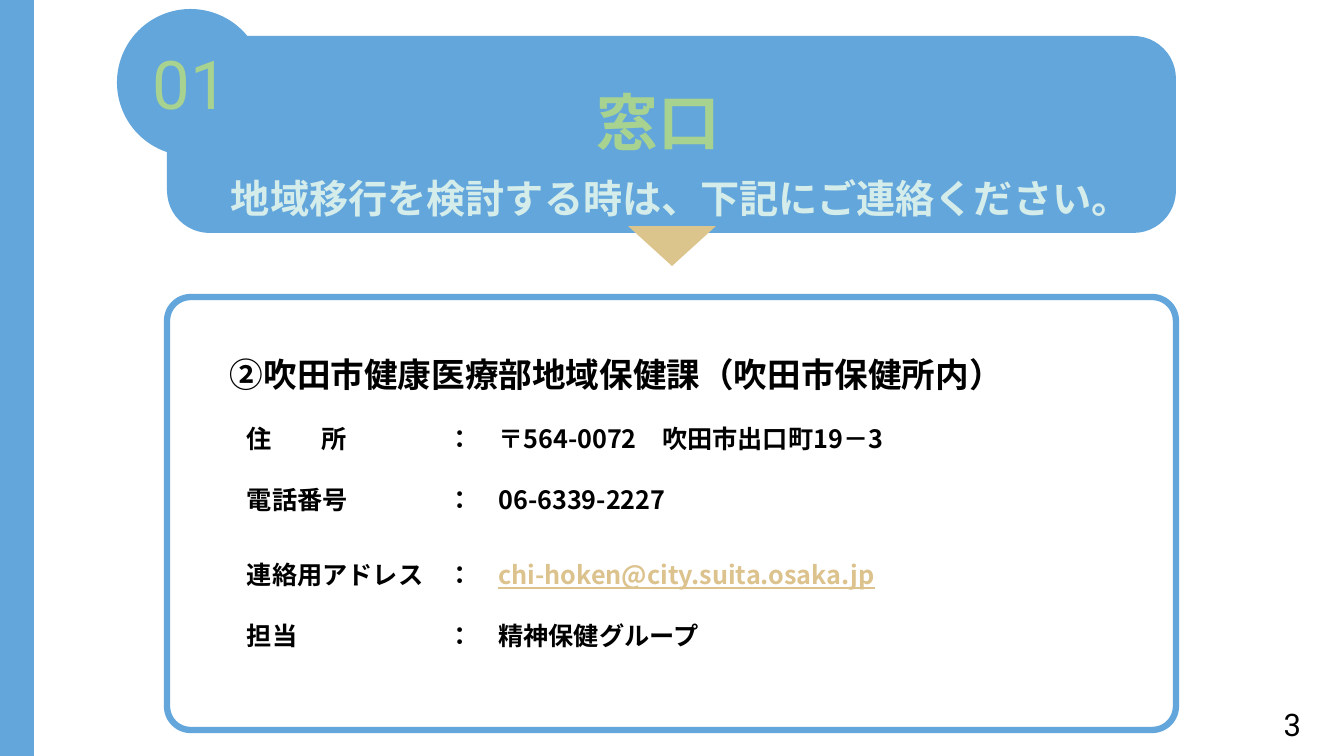
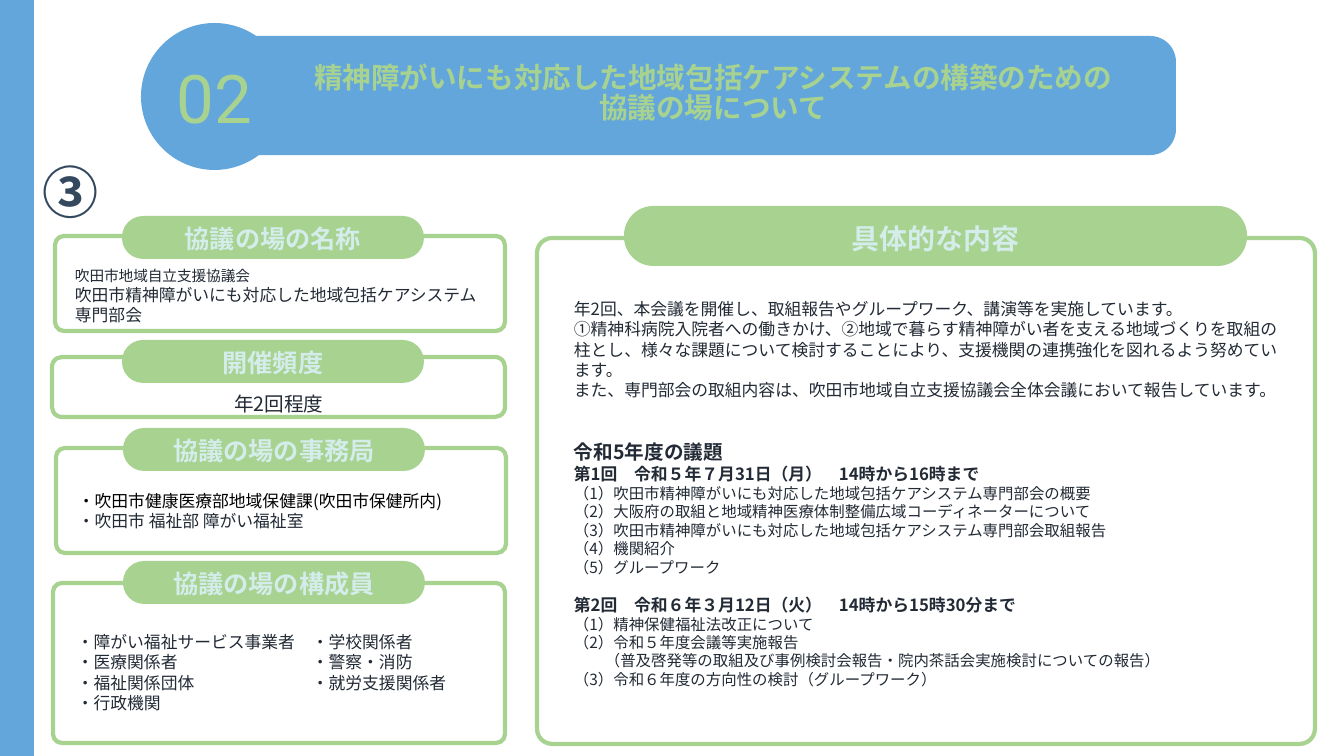
from lxml.etree import SubElement
from pptx import Presentation
from pptx.dml.color import RGBColor
from pptx.enum.lang import MSO_LANGUAGE_ID as Language
from pptx.enum.shapes import MSO_SHAPE as Shape
from pptx.enum.text import MSO_ANCHOR as Anchor, PP_ALIGN as Align
from pptx.oxml.ns import qn
from pptx.util import Pt

SLIDE_WIDTH, SLIDE_HEIGHT = 1344, 756
EMU_PER_PX = 914400 / 100.8
JAPANESE, LATIN = "Noto Sans CJK JP", "Roboto"
LINE_RATIO = 1.2
COLORS = {
    "blue": "63A6DB", "green": "A7D28F", "pale": "D4ECEA", "sand": "DCC58C",
    "link": "DCC28C", "ink": "222A35", "navy": "34485E",
    "black": "000000", "white": "FFFFFF",
}

# Contact slide: label, value, value format, points of space before
CONTACT_HEADING = "②吹田市健康医療部地域保健課（吹田市保健所内）"
CONTACT_ROWS = [
    ("住\t所", "〒564-0072　吹田市出口町19－3", {}, 0),
    ("電話番号", "06-6339-2227", {}, 22),
    ("連絡用アドレス", "chi-hoken@city.suita.osaka.jp",
     {"color": "link", "underline": True}, 32),
    ("担当", "精神保健グループ", {}, 22),
]
LABEL_TAB, COLON_TAB = 75, 201

# Council slide: pill title, pill box, frame box, corner radius, pill format
SMALL_PILL = {"size": 18, "top": 6}
PANELS = [
    ("協議の場の名称", (122, 216, 302, 43), (55, 236, 450, 95), 9, SMALL_PILL),
    ("開催頻度", (122, 340, 302, 43), (52, 357, 453, 60), 10, SMALL_PILL),
    ("協議の場の事務局", (123, 428, 302, 43), (56, 448, 450, 105), 9, SMALL_PILL),
    ("協議の場の構成員", (123, 561, 302, 43), (53, 583, 452, 160), 9, SMALL_PILL),
    ("具体的な内容", (624, 206, 623, 60), (537, 238, 778, 506), 15,
     {"size": 20, "top": 10}),
]
COUNCIL_TITLE = ["精神障がいにも対応した地域包括ケアシステムの構築のための", "協議の場について"]
COUNCIL_NAMES = [
    ("吹田市地域自立支援協議会", {"size": 10.5}),
    "吹田市精神障がいにも対応した地域包括ケアシステム専門部会",
]
OFFICES = [
    ("・吹田市健康医療部地域保健課(吹田市保健所内)", {"color": "black"}),
    "・吹田市 福祉部 障がい福祉室",
]
MEMBERS = [
    "・障がい福祉サービス事業者\t・学校関係者",
    "・医療関係者\t・警察・消防",
    "・福祉関係団体\t・就労支援関係者",
    "・行政機関",
]
MEMBER_TAB = 235
ACTIVITIES = [
    "年2回、本会議を開催し、取組報告やグループワーク、講演等を実施しています。",
    "①精神科病院入院者への働きかけ、②地域で暮らす精神障がい者を支える地域づくりを取組の"
    "柱とし、様々な課題について検討することにより、支援機関の連携強化を図れるよう努めています。",
    "また、専門部会の取組内容は、吹田市地域自立支援協議会全体会議において報告しています。",
]
AGENDA_HEADING = "令和5年度の議題"
# Meeting, points of space before, (agenda item, indent in px)
MEETINGS = [
    ("第1回　令和５年７月31日（月）　14時から16時まで", 0, [
        ("（1）吹田市精神障がいにも対応した地域包括ケアシステム専門部会の概要", 0),
        ("（2）大阪府の取組と地域精神医療体制整備広域コーディネーターについて", 0),
        ("（3）吹田市精神障がいにも対応した地域包括ケアシステム専門部会取組報告", 0),
        ("（4）機関紹介", 0),
        ("（5）グループワーク", 0),
    ]),
    ("第2回　令和６年３月12日（火）　14時から15時30分まで", 13, [
        ("（1）精神保健福祉法改正について", 0),
        ("（2）令和５年度会議等実施報告", 0),
        ("（普及啓発等の取組及び事例検討会報告・院内茶話会実施検討についての報告）", 31),
        ("（3）令和６年度の方向性の検討（グループワーク）", 0),
    ]),
]


def px(length):
    return round(length * EMU_PER_PX)


def rgb(name):
    return RGBColor.from_string(COLORS[name])


def add_span(para, text, size=12, color="ink", bold=False, underline=False,
             font=JAPANESE, **_):
    span = para.add_run()
    span.text = text
    style = span.font
    style.size, style.bold, style.underline = Pt(size), bold, underline
    style.color.rgb = rgb(color)
    style.name = font
    style.language_id = Language.JAPANESE
    SubElement(span._r.rPr, qn("a:ea")).set("typeface", JAPANESE)


def write(frame, paras, **defaults):
    """Fill a text frame; a paragraph is text, or (text or spans, format)."""
    for index, item in enumerate(paras):
        content, changes = (item, {}) if isinstance(item, str) else item
        look = {**defaults, **changes}
        para = frame.paragraphs[0] if index == 0 else frame.add_paragraph()
        properties = para._p.get_or_add_pPr()
        if look.get("indent"):
            properties.set("marL", str(px(look["indent"])))
        if look.get("tabs"):
            stops = SubElement(properties, qn("a:tabLst"))
            for stop in look["tabs"]:
                SubElement(stops, qn("a:tab"), pos=str(px(stop)), algn="l")
        para.alignment = look.get("align", Align.LEFT)
        if not look.get("natural"):
            para.line_spacing = Pt(
                look.get("line") or round(look.get("size", 12) * LINE_RATIO, 1))
        if index and look.get("before"):
            para.space_before = Pt(look["before"])
        spans = [(content, {})] if isinstance(content, str) else content
        for text, span_look in spans:
            add_span(para, text, **{**look, **span_look})


def add_text(page, box, paras, **look):
    frame = page.shapes.add_textbox(*map(px, box)).text_frame
    frame.word_wrap = True
    write(frame, paras, **look)


def add_box(page, kind, box, fill, line=None, width=3, radius=None):
    shape = page.shapes.add_shape(kind, *map(px, box))
    shape.shadow.inherit = False
    shape.fill.solid()
    shape.fill.fore_color.rgb = rgb(fill)
    if line:
        shape.line.color.rgb = rgb(line)
        shape.line.width = Pt(width)
    else:
        shape.line.fill.background()
    if radius:
        shape.adjustments[0] = round(radius / min(box[2:]), 3)
    return shape


def add_section(deck, number, banner_height, circle_at):
    """Start a slide with its side band, banner and numbered circle."""
    page = deck.slides.add_slide(deck.slide_layouts[6])
    add_box(page, Shape.RECTANGLE, (0, 0, 34, SLIDE_HEIGHT), "blue")
    add_box(page, Shape.ROUNDED_RECTANGLE, (167, 36, 1009, banner_height),
            "blue", radius=banner_height * 0.216)
    circle = add_box(page, Shape.OVAL, (*circle_at, 147, 147), "blue")
    circle.text_frame.vertical_anchor = Anchor.MIDDLE
    write(circle.text_frame, [number], size=48, color="green", font=LATIN,
          align=Align.CENTER, natural=True)
    return page


def add_panel(page, title, pill_box, frame_box, radius, look):
    add_box(page, Shape.ROUNDED_RECTANGLE, frame_box, "white",
            line="green", radius=radius)
    pill = add_box(page, Shape.ROUNDED_RECTANGLE, pill_box, "green",
                   radius=pill_box[3] * 0.49)
    pill.text_frame.margin_top = px(look["top"])
    write(pill.text_frame, [title], size=look["size"], color="pale",
          bold=True, align=Align.CENTER)


def build_contact(deck):
    page = add_section(deck, "01", 197, (117, 9))
    add_text(page, (331, 79, 655, 99), ["窓口"], size=44, color="green",
             bold=True, align=Align.CENTER)
    add_text(page, (221, 169, 930, 57),
             ["地域移行を検討する時は、下記にご連絡ください。"],
             size=28, color="pale", bold=True, font=LATIN)
    add_box(page, Shape.ROUNDED_RECTANGLE, (167, 297, 1009, 433), "white",
            line="blue", width=4.5, radius=24)
    arrow = add_box(page, Shape.ISOSCELES_TRIANGLE, (628, 226, 88, 40), "sand")
    arrow.rotation = 180
    add_text(page, (220, 349, 930, 50), [CONTACT_HEADING], size=24,
             color="black", bold=True)
    rows = []
    for label, value, value_look, before in CONTACT_ROWS:
        tabs = [LABEL_TAB, COLON_TAB] if "\t" in label else [COLON_TAB]
        spans = [(f"{label}\t：　", {}), (value, value_look)]
        rows.append((spans, {"tabs": tabs, "before": before}))
    add_text(page, (237, 418, 900, 240), rows, size=18, color="black", bold=True)
    add_text(page, (998, 701, 313, 40), ["3"], size=22.2, color="black",
             font=LATIN, align=Align.RIGHT, natural=True)


def build_council(deck):
    page = add_section(deck, "02", 119, (141, 23))
    add_text(page, (296, 58, 834, 99), COUNCIL_TITLE, size=20.4, line=22,
             color="green", bold=True, align=Align.CENTER)
    add_text(page, (7, 153, 127, 76), ["③"], size=40, color="navy",
             bold=True, align=Align.CENTER)
    for panel in PANELS:
        add_panel(page, *panel)
    add_text(page, (65, 262, 433, 84), COUNCIL_NAMES)
    add_text(page, (73, 387, 412, 38), ["年2回程度"], size=14, align=Align.CENTER)
    add_text(page, (68, 486, 438, 59), OFFICES)
    add_text(page, (67, 627, 419, 108), MEMBERS, tabs=[MEMBER_TAB])
    details = [*ACTIVITIES,
               (AGENDA_HEADING, {"size": 14, "bold": True, "before": 28.8})]
    for meeting, before, items in MEETINGS:
        details.append((meeting, {"bold": True, "before": before}))
        details += [(item, {"size": 11, "indent": indent})
                    for item, indent in items]
    add_text(page, (564, 294, 735, 440), details)


def main():
    deck = Presentation()
    deck.slide_width, deck.slide_height = px(SLIDE_WIDTH), px(SLIDE_HEIGHT)
    build_contact(deck)
    build_council(deck)
    deck.save("out.pptx")


if __name__ == "__main__":
    main()
